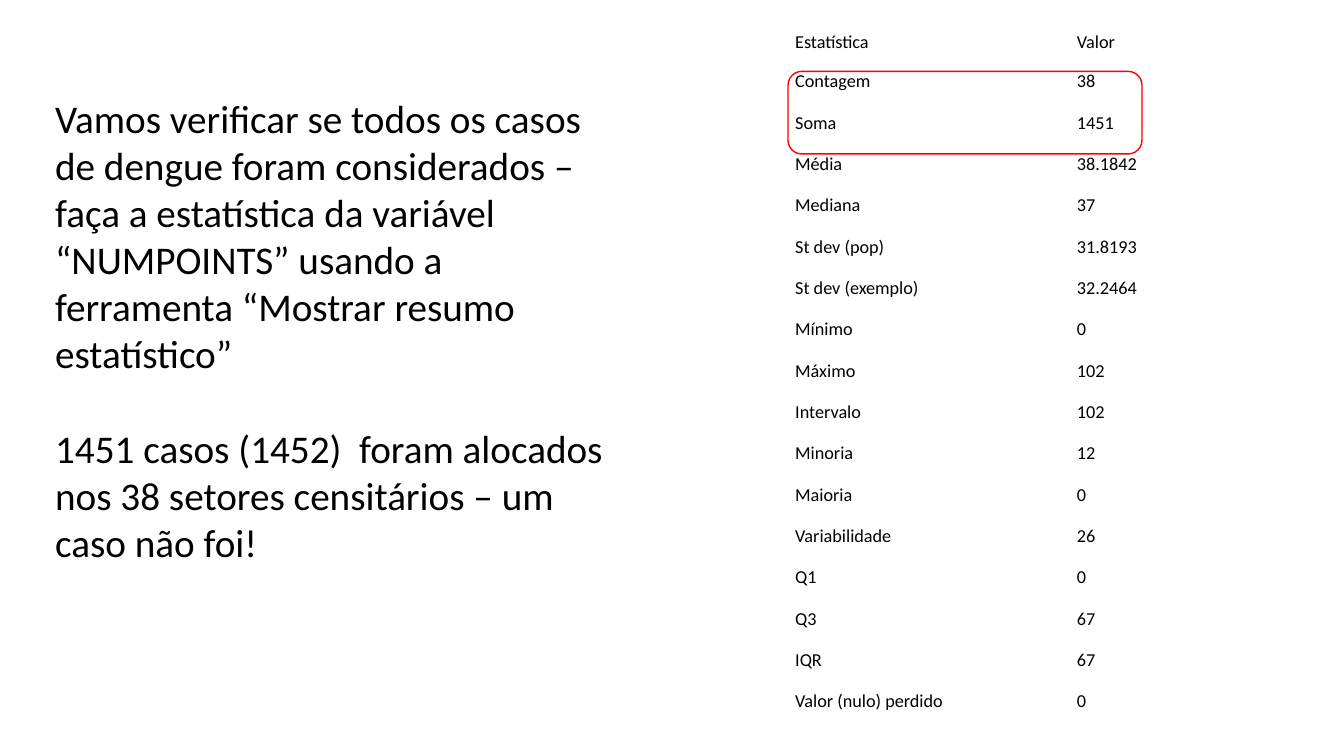
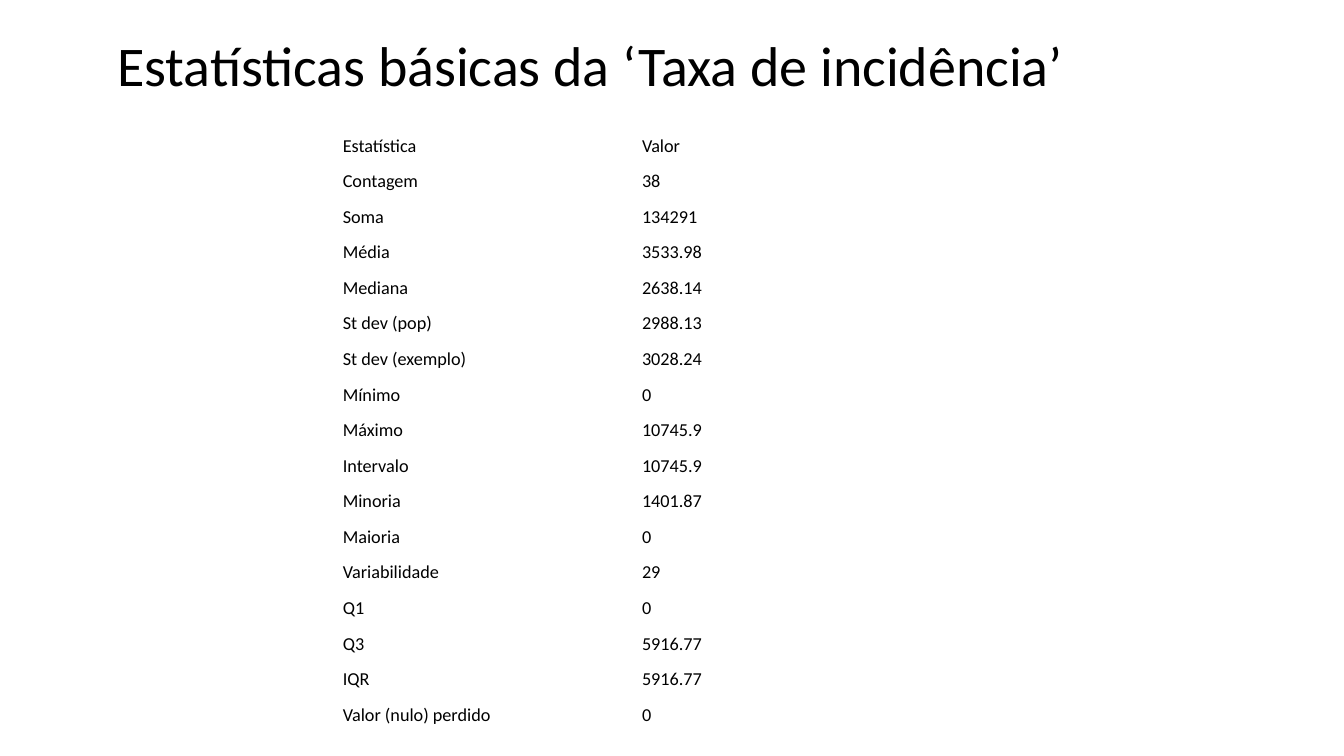
from pptx import Presentation
from pptx.dml.color import RGBColor
from pptx.enum.shapes import MSO_SHAPE as Shape
from pptx.enum.text import MSO_ANCHOR as Anchor, PP_ALIGN as Align
from pptx.util import Cm, Pt

FONT = "Calibri"
BLACK = "000000"
RED = "FF0000"
TITLE_ONLY, BLANK = 5, 6

LABELS = ["Estatística", "Contagem", "Soma", "Média", "Mediana", "St dev (pop)",
          "St dev (exemplo)", "Mínimo", "Máximo", "Intervalo", "Minoria", "Maioria",
          "Variabilidade", "Q1", "Q3", "IQR", "Valor (nulo) perdido"]
CASES = ["Valor", "38", "1451", "38.1842", "37", "31.8193", "32.2464", "0", "102",
         "102", "12", "0", "26", "0", "67", "67", "0"]
RATES = ["Valor", "38", "134291", "3533.98", "2638.14", "2988.13", "3028.24", "0",
         "10745.9", "10745.9", "1401.87", "0", "29", "0", "5916.77", "5916.77", "0"]
NOTES = [
    "Vamos verificar se todos os casos de dengue foram considerados – faça a "
    "estatística da variável “NUMPOINTS” usando a ferramenta “Mostrar resumo estatístico”",
    "1451 casos (1452)  foram alocados nos 38 setores censitários – um caso não foi!",
]


def rgb(code):
    return RGBColor.from_string(code)


def write(frame, *lines, size=13, color=BLACK, anchor=Anchor.TOP, gap=0):
    """Fill a text frame or cell frame; gap is the space between paragraphs."""
    frame.word_wrap = True
    frame.vertical_anchor = anchor
    for i, line in enumerate(lines):
        para = frame.add_paragraph() if i else frame.paragraphs[0]
        para.alignment = Align.LEFT
        para.space_before = Pt(gap if i else 0)
        run = para.add_run()
        run.text = line
        run.font.name = FONT
        run.font.size = Pt(size)
        run.font.bold = False
        run.font.color.rgb = rgb(color)


def place(shape, box):
    shape.left, shape.top, shape.width, shape.height = map(Cm, box)


def stats(slide, values, box, split, head):
    """Two-column table; split is the first column's width, head the first row's height."""
    left, top, width, height = box
    count = len(LABELS)
    table = slide.shapes.add_table(count, 2, *map(Cm, box)).table
    table.first_row = table.horz_banding = False
    table.columns[0].width = Cm(split)
    table.columns[1].width = Cm(width - split)
    for i, pair in enumerate(zip(LABELS, values)):
        table.rows[i].height = Cm((height - head) / (count - 1) if i else head)
        for j, text in enumerate(pair):
            cell = table.cell(i, j)
            cell.fill.background()
            cell.margin_left = cell.margin_right = Cm(0.18)
            cell.margin_top = cell.margin_bottom = Cm(0.08)
            cell.vertical_anchor = Anchor.MIDDLE
            write(cell.text_frame, text, anchor=None)


def outline(slide, box):
    frame = slide.shapes.add_shape(Shape.ROUNDED_RECTANGLE, *map(Cm, box))
    frame.shadow.inherit = False
    frame.fill.background()
    frame.line.color.rgb = rgb(RED)
    frame.line.width = Pt(1)


def check(deck):
    """Slide with the instructions beside the case counts."""
    slide = deck.slides.add_slide(deck.slide_layouts[BLANK])
    note = slide.shapes.add_textbox(*map(Cm, (1.14, 2.24, 14.73, 12.22)))
    write(note.text_frame, *NOTES, size=28, gap=34)
    left, top = 19.86, 0.6
    stats(slide, CASES, (left, top, 13.6, 17.6), split=7.1, head=0.94)
    outline(slide, (left, top + 1.2, 8.92, 2.08))


def rate(deck):
    """Slide with the incidence rate statistics under a title."""
    slide = deck.slides.add_slide(deck.slide_layouts[TITLE_ONLY])
    title = slide.shapes.title
    place(title, (2.7, 0.64, 25.35, 1.96))
    write(title.text_frame, "Estatísticas básicas da ‘Taxa de incidência’", size=40)
    height = 15.24
    stats(slide, RATES, (8.46, 3.23, 15.08, height), split=7.54,
          head=height / len(LABELS))


def main():
    deck = Presentation()
    deck.slide_width, deck.slide_height = Cm(33.87), Cm(19.05)
    check(deck)
    rate(deck)
    deck.save("out.pptx")


if __name__ == "__main__":
    main()
